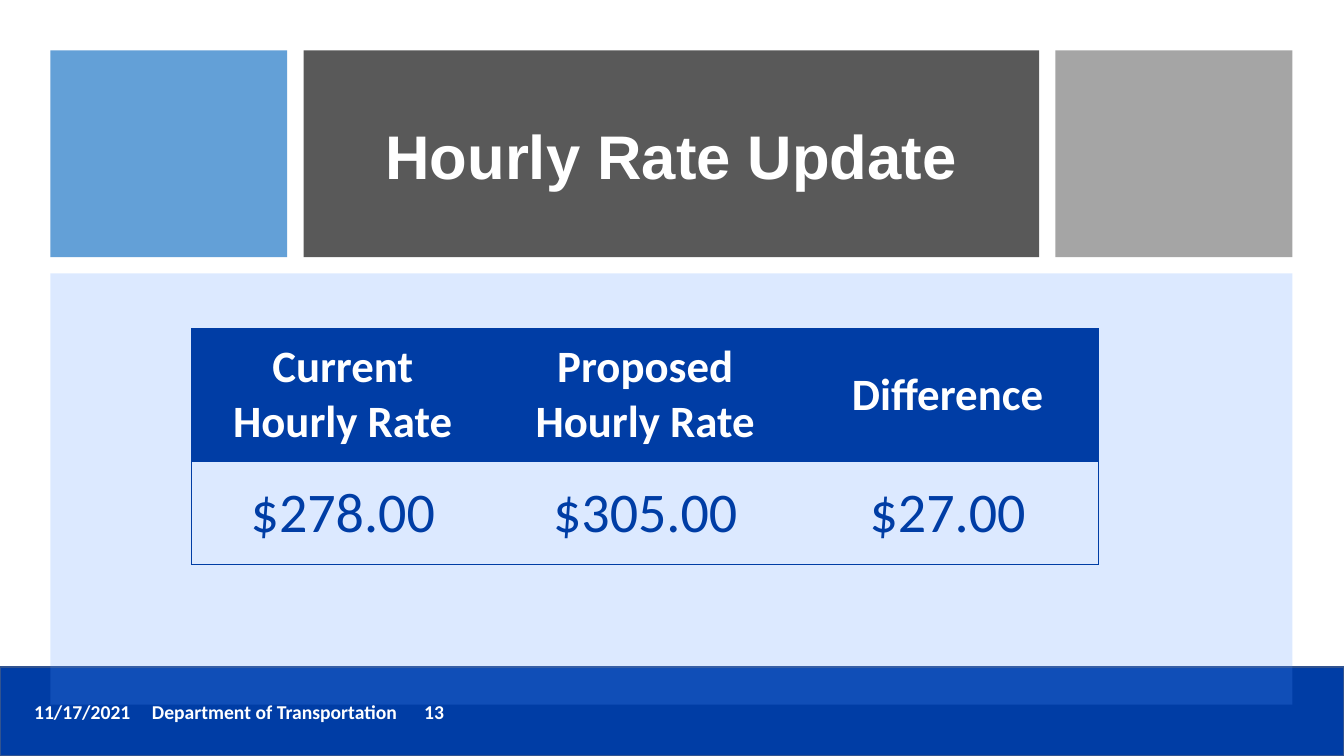
from lxml.etree import SubElement as Sub
from pptx import Presentation
from pptx.dml.color import RGBColor as RGB
from pptx.enum.shapes import MSO_SHAPE as SHAPE
from pptx.enum.text import MSO_ANCHOR as ANCHOR, PP_ALIGN as ALIGN
from pptx.oxml.ns import qn
from pptx.util import Cm, Pt

NAVY = RGB(0x00, 0x3D, 0xA5)
EDGE = RGB(0x31, 0x53, 0x8F)
SKY = RGB(0x5B, 0x9B, 0xD5)
DARK = RGB(0x59, 0x59, 0x59)
GRAY = RGB(0xA5, 0xA5, 0xA5)
PALE = RGB(0x53, 0x92, 0xFF)
WHITE = RGB(0xFF, 0xFF, 0xFF)

TITLE = "Hourly Rate Update"
FOOTER = "11/17/2021\tDepartment of Transportation\t13"
TABS = [2.97, 9.83]
RATES = [
    ["Current Hourly Rate", "Proposed Hourly Rate", "Difference"],
    ["$278.00", "$305.00", "$27.00"],
]
ROWS = [
    (3.35, 32, True, WHITE, NAVY),
    (2.59, 40, False, NAVY, None),
]
COL = 7.62
NO_STYLE = "{2D5ABB26-0587-4C30-8999-92F81FD0307C}"

WIDE, HIGH = 33.87, 19.05
EDGE_X, TOP, GAP = 1.27, 1.27, 0.41
SIDE, MID, HEAD = 5.97, 18.54, 5.21
MID_X = EDGE_X + SIDE + GAP
LAST_X = MID_X + MID + GAP
BODY_Y = TOP + HEAD + GAP
BAR_Y = 16.81
BLOCKS = [
    (EDGE_X, TOP, SIDE, HEAD, SKY, 95),
    (MID_X, TOP, MID, HEAD, DARK, 100),
    (LAST_X, TOP, SIDE, HEAD, GRAY, 100),
    (EDGE_X, BODY_Y, LAST_X + SIDE - EDGE_X, 10.87, PALE, 20),
]


def add_block(slide, x, y, w, h, color, alpha=100):
    block = slide.shapes.add_shape(SHAPE.RECTANGLE, Cm(x), Cm(y), Cm(w), Cm(h))
    block.shadow.inherit = False
    block.fill.solid()
    block.fill.fore_color.rgb = color
    block.line.fill.background()
    if alpha < 100:
        tint = block._element.spPr.find(qn("a:solidFill"))[0]
        Sub(tint, qn("a:alpha"), val=str(alpha * 1000))
    return block


def add_run(para, text, size, color, bold, face="Calibri"):
    run = para.add_run()
    run.text = text
    font = run.font
    font.name, font.size, font.bold = face, Pt(size), bold
    font.color.rgb = color


def add_box(slide, x, y, w, h):
    frame = slide.shapes.add_textbox(Cm(x), Cm(y), Cm(w), Cm(h)).text_frame
    frame.word_wrap = True
    return frame


def add_edge(cell, side):
    line = Sub(cell._tc.get_or_add_tcPr(), qn("a:ln" + side), w=str(Pt(0.5)))
    Sub(Sub(line, qn("a:solidFill")), qn("a:srgbClr"), val=str(NAVY))


def add_rates(slide):
    count = len(RATES[0])
    high = sum(row[0] for row in ROWS)
    frame = slide.shapes.add_table(
        len(RATES), count, Cm(4.83), Cm(8.28), Cm(COL * count), Cm(high))
    table = frame.table
    table.first_row = table.horz_banding = False
    table._tbl.tblPr.find(qn("a:tableStyleId")).text = NO_STYLE
    for r, (tall, size, bold, ink, fill) in enumerate(ROWS):
        table.rows[r].height = Cm(tall)
        for c, text in enumerate(RATES[r]):
            table.columns[c].width = Cm(COL)
            cell = table.cell(r, c)
            cell.vertical_anchor = ANCHOR.MIDDLE
            cell.margin_left = cell.margin_right = Cm(0.43)
            cell.margin_top = cell.margin_bottom = Cm(0.2)
            sides = {"L": c == 0, "R": c == count - 1,
                     "T": True, "B": r == len(ROWS) - 1}
            for side, shown in sides.items():
                if shown:
                    add_edge(cell, side)
            if fill is None:
                cell.fill.background()
            else:
                cell.fill.solid()
                cell.fill.fore_color.rgb = fill
            para = cell.text_frame.paragraphs[0]
            para.alignment = ALIGN.CENTER
            add_run(para, text, size, ink, bold)


def main():
    deck = Presentation()
    deck.slide_width, deck.slide_height = Cm(WIDE), Cm(HIGH)
    slide = deck.slides.add_slide(deck.slide_layouts[6])

    bar = add_block(slide, 0, BAR_Y, WIDE, HIGH - BAR_Y, NAVY)
    bar.line.color.rgb = EDGE
    bar.line.width = Pt(1)

    para = add_box(slide, 0.61, 17.5, 25.55, 0.86).paragraphs[0]
    stops = Sub(para._p.get_or_add_pPr(), qn("a:tabLst"))
    for stop in TABS:
        Sub(stops, qn("a:tab"), pos=str(Cm(stop)), algn="l")
    add_run(para, FOOTER, 14, WHITE, True)

    for block in BLOCKS:
        add_block(slide, *block)

    frame = add_box(slide, 8.46, 2.03, 16.92, 3.96)
    frame.vertical_anchor = ANCHOR.MIDDLE
    para = frame.paragraphs[0]
    para.alignment = ALIGN.CENTER
    para.line_spacing = 0.9
    add_run(para, TITLE, 44, WHITE, True, "Arial")

    add_rates(slide)
    deck.save("out.pptx")


if __name__ == "__main__":
    main()
